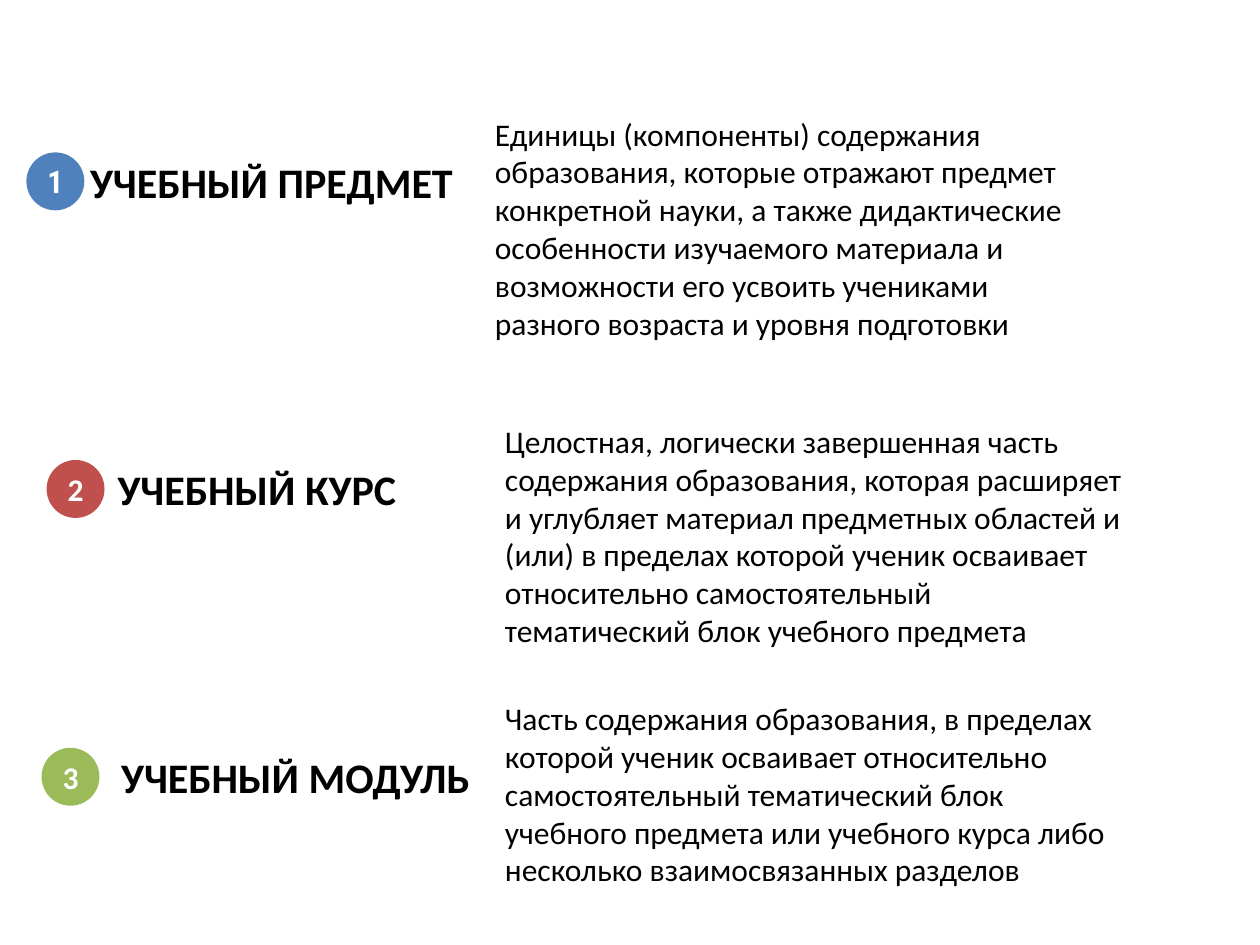
from dataclasses import dataclass

from pptx import Presentation
from pptx.dml.color import RGBColor
from pptx.enum.shapes import MSO_SHAPE
from pptx.enum.text import MSO_ANCHOR, MSO_AUTO_SIZE, PP_ALIGN
from pptx.util import Inches, Pt


@dataclass(frozen=True)
class Theme:
    font: str = "Calibri"
    accent_font: str = "Roboto Condensed"
    ink: str = "000000"
    light: str = "FFFFFF"
    term_size: int = 24
    body_size: int = 18


THEME = Theme()

# Content: badge, term and definition of each unit
# Horizontal spans are (left, width) in percent of the slide's width;
# mid and top are in percent of its height.
UNITS = [
    dict(number="1", color="4F81BD", number_font=THEME.accent_font,
         term="УЧЕБНЫЙ ПРЕДМЕТ",
         definition="Единицы (компоненты) содержания образования, которые "
                    "отражают предмет конкретной науки, а также дидактические "
                    "особенности изучаемого материала и возможности его усвоить "
                    "учениками разного возраста и уровня подготовки",
         lines=6, mid=19.2, top=11.47,
         badge_left=2.1, term_span=(5.1, 32.9), definition_span=(38.3, 49.4)),
    dict(number="2", color="C0504D", number_font=THEME.font,
         term="УЧЕБНЫЙ КУРС",
         definition="Целостная, логически завершенная часть содержания "
                    "образования, которая расширяет и углубляет материал "
                    "предметных областей и (или) в пределах которой ученик "
                    "осваивает относительно самостоятельный тематический блок "
                    "учебного предмета",
         lines=6, mid=51.75, top=44,
         badge_left=3.7, term_span=(7.2, 26.4), definition_span=(39.1, 51)),
    dict(number="3", color="9BBB59", number_font=THEME.font,
         term="УЧЕБНЫЙ МОДУЛЬ",
         definition="Часть содержания образования, в пределах которой ученик "
                    "осваивает относительно самостоятельный тематический блок "
                    "учебного предмета или учебного курса либо несколько "
                    "взаимосвязанных разделов",
         lines=5, mid=82.2, top=73.33,
         badge_left=3.3, term_span=(7.7, 31.5), definition_span=(39.1, 50)),
]

BADGE = Inches(0.46)
TERM_HEIGHT = Inches(0.4)
LINE_HEIGHT = Inches(0.3)
PADDING = Inches(0.1)

deck = Presentation()
deck.slide_width, deck.slide_height = Inches(10), Inches(7.5)
slide = deck.slides.add_slide(deck.slide_layouts[6])


def across(percent):
    return round(deck.slide_width * percent / 100)


def down(percent):
    return round(deck.slide_height * percent / 100)


def write(holder, text, size, color, font=THEME.font, label=False):
    """Labels are bold and centred; other text keeps the default insets."""
    frame = holder.text_frame
    frame.word_wrap = True
    frame.text = text
    paragraph = frame.paragraphs[0]
    paragraph.font.name = font
    paragraph.font.size = Pt(size)
    paragraph.font.bold = label
    paragraph.font.color.rgb = RGBColor.from_string(color)
    if label:
        paragraph.alignment = PP_ALIGN.CENTER
        frame.vertical_anchor = MSO_ANCHOR.MIDDLE
        frame.margin_left = frame.margin_right = PADDING
        frame.margin_top = frame.margin_bottom = PADDING
    else:
        paragraph.alignment = PP_ALIGN.LEFT
        frame.auto_size = MSO_AUTO_SIZE.SHAPE_TO_FIT_TEXT


for unit in UNITS:
    middle = down(unit["mid"])

    # Term
    left, width = map(across, unit["term_span"])
    term = slide.shapes.add_textbox(left, middle - TERM_HEIGHT // 2, width, TERM_HEIGHT)
    write(term, unit["term"], THEME.term_size, THEME.ink, label=True)

    # Numbered badge
    badge = slide.shapes.add_shape(MSO_SHAPE.OVAL, across(unit["badge_left"]),
                                   middle - BADGE // 2, BADGE, BADGE)
    badge.shadow.inherit = False
    badge.fill.solid()
    badge.fill.fore_color.rgb = RGBColor.from_string(unit["color"])
    badge.line.fill.background()
    write(badge, unit["number"], THEME.body_size, THEME.light,
          unit["number_font"], label=True)

    # Definition
    left, width = map(across, unit["definition_span"])
    definition = slide.shapes.add_textbox(left, down(unit["top"]), width,
                                          unit["lines"] * LINE_HEIGHT + PADDING)
    write(definition, unit["definition"], THEME.body_size, THEME.ink)

deck.save("out.pptx")
